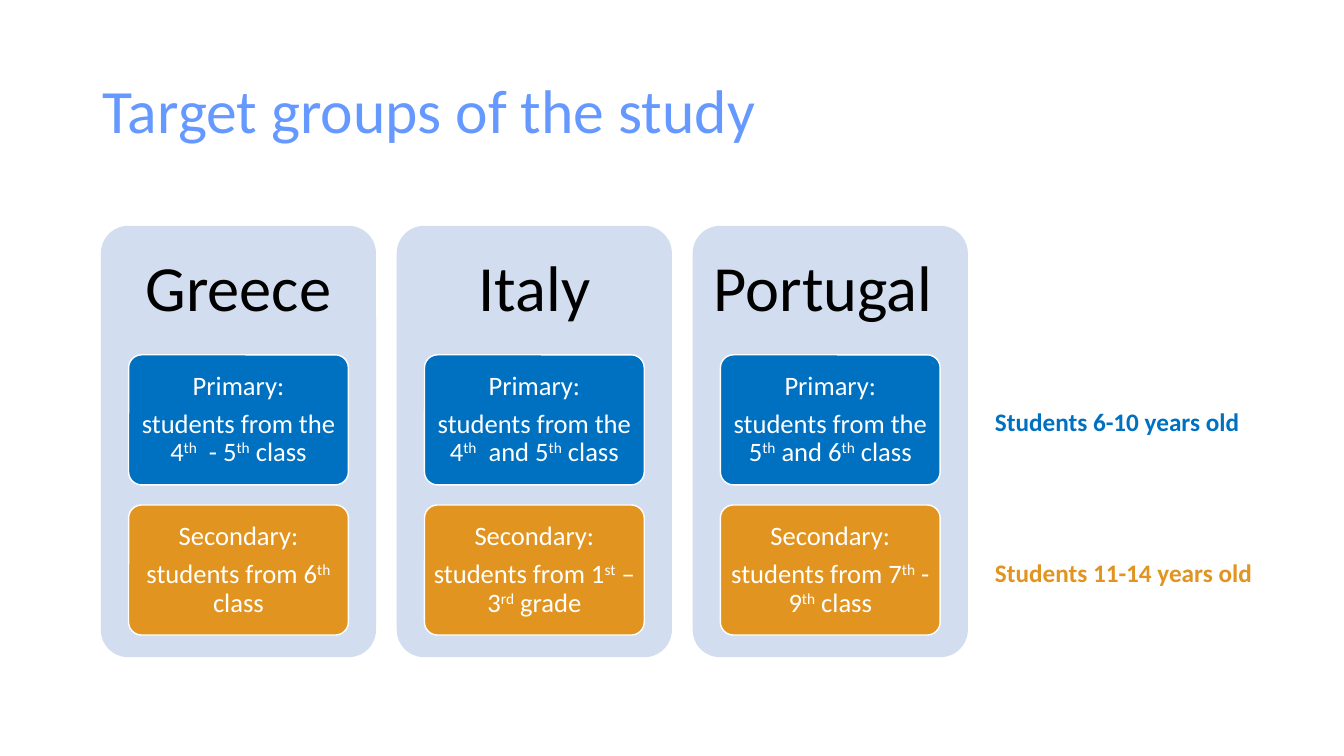
from pptx import Presentation
from pptx.dml.color import RGBColor
from pptx.enum.shapes import MSO_SHAPE
from pptx.enum.text import MSO_ANCHOR, PP_ALIGN
from pptx.util import Inches, Pt

ROUNDED = MSO_SHAPE.ROUNDED_RECTANGLE
MIDDLE = MSO_ANCHOR.MIDDLE
LEFT, CENTER = PP_ALIGN.LEFT, PP_ALIGN.CENTER

THEME = {
    "font": "Calibri",
    "title": "6699FF", "panel": "D2DEEF", "country": "000000",
    "primary": "0070C0", "secondary": "E1941F", "light": "FFFFFF",
    "title_size": 44, "country_size": 46, "card_size": 19, "age_size": 18,
}


def write(shape, text, *, size, color, bold=False, align=LEFT, anchor=MIDDLE,
          margins=(0.1, 0.05), spacing=1.0, after=0, wrap=True):
    """Fill a shape with text; parts between ^ marks are superscript."""
    frame = shape.text_frame
    frame.word_wrap = wrap
    frame.vertical_anchor = anchor
    frame.margin_left = frame.margin_right = Inches(margins[0])
    frame.margin_top = frame.margin_bottom = Inches(margins[1])
    for number, line in enumerate(text.split("\n")):
        paragraph = frame.add_paragraph() if number else frame.paragraphs[0]
        paragraph.alignment = align
        paragraph.line_spacing = spacing
        paragraph.space_after = Pt(after)
        for index, part in enumerate(line.split("^")):
            run = paragraph.add_run()
            run.text = part
            run.font.name = THEME["font"]
            run.font.size = Pt(size)
            run.font.bold = bold
            run.font.color.rgb = RGBColor.from_string(color)
            if index % 2:
                run.font._element.set("baseline", "30000")


def add_rounded(left, top, width, height, fill, outline=None):
    box = slide.shapes.add_shape(ROUNDED, Inches(left), Inches(top), Inches(width), Inches(height))
    box.adjustments[0] = 0.1
    box.shadow.inherit = False
    box.fill.solid()
    box.fill.fore_color.rgb = RGBColor.from_string(fill)
    if outline:
        box.line.color.rgb = RGBColor.from_string(outline)
        box.line.width = Pt(1)
    else:
        box.line.fill.background()
    return box


presentation = Presentation()
presentation.slide_width = Inches(13.33)
presentation.slide_height = Inches(7.5)
slide = presentation.slides.add_slide(presentation.slide_layouts[6])

# Title
title = slide.shapes.add_textbox(Inches(0.92), Inches(0.4), Inches(11.5), Inches(1.45))
write(title, "Target groups of the study", size=THEME["title_size"], color=THEME["title"],
      spacing=0.9)

# Country panels, each with a primary and a secondary card
PANEL_LEFT, PANEL_TOP, PANEL_WIDTH, PANEL_HEIGHT = 1, 2.24, 2.73, 4.28
PANEL_STEP = 5.87 / 2
CARD_WIDTH, CARD_HEIGHT = 2.18, 1.29
CARD_INSET = (PANEL_WIDTH - CARD_WIDTH) / 2
CARD_TOPS = {"primary": 3.52, "secondary": 5.01}

countries = [
    ("Greece", "Primary:\nstudents from the 4^th^  - 5^th^ class",
     "Secondary:\nstudents from 6^th^ class"),
    ("Italy", "Primary:\nstudents from the 4^th^  and 5^th^ class",
     "Secondary:\nstudents from 1^st^ – 3^rd^ grade"),
    ("Portugal ", "Primary:\nstudents from the 5^th^ and 6^th^ class",
     "Secondary:\nstudents from 7^th^ - 9^th^ class"),
]
for column, (country, *levels) in enumerate(countries):
    left = PANEL_LEFT + column * PANEL_STEP
    add_rounded(left, PANEL_TOP, PANEL_WIDTH, PANEL_HEIGHT, THEME["panel"])
    heading = slide.shapes.add_textbox(Inches(left), Inches(PANEL_TOP),
                                       Inches(PANEL_WIDTH), Inches(CARD_HEIGHT))
    write(heading, country, size=THEME["country_size"], color=THEME["country"],
          align=CENTER, margins=(0.19, 0.19), spacing=0.9, after=16)
    for (level, top), students in zip(CARD_TOPS.items(), levels):
        card = add_rounded(left + CARD_INSET, top, CARD_WIDTH, CARD_HEIGHT,
                           THEME[level], THEME["light"])
        write(card, students, size=THEME["card_size"], color=THEME["light"],
              align=CENTER, margins=(0.05, 0.04), spacing=0.9, after=6.65)

# Age ranges beside the card rows
ages = [
    ("Students 6-10 years old", "primary", 3.98, 2.64),
    ("Students 11-14 years old", "secondary", 5.48, 2.77),
]
for age, level, top, width in ages:
    age_label = slide.shapes.add_textbox(Inches(9.77), Inches(top), Inches(width), Inches(0.4))
    write(age_label, age, size=THEME["age_size"], color=THEME[level], bold=True,
          anchor=MSO_ANCHOR.TOP, wrap=False)

presentation.save("out.pptx")
